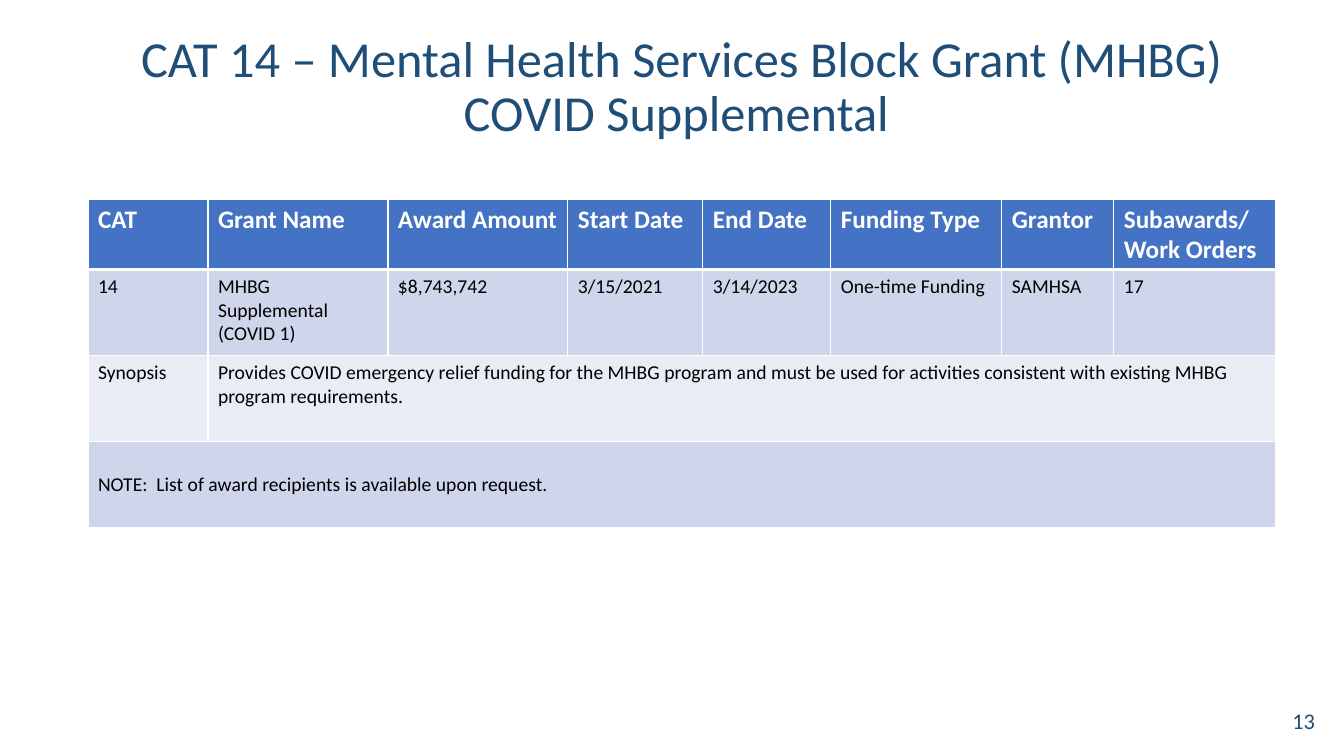
from lxml.etree import SubElement
from pptx import Presentation
from pptx.dml.color import RGBColor
from pptx.enum.text import MSO_ANCHOR as Anchor, PP_ALIGN as Align
from pptx.oxml.ns import qn
from pptx.util import Emu, Pt

SCALE = 12192000 / 1344  # EMU in one px
FONT = "Calibri"
NAVY = RGBColor(0x1F, 0x4E, 0x79)
BLUE = RGBColor(0x44, 0x72, 0xC4)
BAND_DARK = RGBColor(0xCF, 0xD5, 0xEA)
BAND_LIGHT = RGBColor(0xE9, 0xEB, 0xF5)
WHITE = RGBColor(0xFF, 0xFF, 0xFF)
BLACK = RGBColor(0, 0, 0)

COLUMN_WIDTHS = [120, 180, 180, 135, 128, 171, 112, 162]
ROW_HEIGHTS = [70, 86, 86, 86]
ROW_FILLS = [BLUE, BAND_DARK, BAND_LIGHT, BAND_DARK]
ROWS = [
    ["CAT", "Grant Name", "Award Amount", "Start Date", "End Date",
     "Funding Type", "Grantor", "Subawards/Work Orders"],
    ["14", "MHBG Supplemental (COVID 1)", "$8,743,742", "3/15/2021", "3/14/2023",
     "One-time Funding", "SAMHSA", "17"],
    ["Synopsis", "Provides COVID emergency relief funding for the MHBG program and must be "
     "used for activities consistent with existing MHBG program requirements."],
    ["NOTE:  List of award recipients is available upon request."],
]


def px(length):
    return Emu(round(length * SCALE))


def style_runs(paragraph, size, color, bold=False):
    for run in paragraph.runs:
        run.font.name = FONT
        run.font.size = Pt(size)
        run.font.bold = bold
        run.font.color.rgb = color


def add_text(slide, box, text, size, align, line_spacing=None):
    shape = slide.shapes.add_textbox(*map(px, box))
    frame = shape.text_frame
    frame.word_wrap = True
    frame.vertical_anchor = Anchor.MIDDLE
    frame.text = text
    paragraph = frame.paragraphs[0]
    paragraph.alignment = align
    paragraph.line_spacing = line_spacing
    style_runs(paragraph, size, NAVY)


def set_borders(cell, top, bottom):
    """White cell borders; widths in points."""
    properties = cell._tc.get_or_add_tcPr()
    widths = {"a:lnL": 1, "a:lnR": 1, "a:lnT": top, "a:lnB": bottom}
    for index, (tag, width) in enumerate(widths.items()):
        line = SubElement(properties, qn(tag), w=str(Pt(width)))
        fill = SubElement(line, qn("a:solidFill"))
        SubElement(fill, qn("a:srgbClr"), val=str(WHITE))
        properties.insert(index, line)


def add_grant_table(slide, left, top):
    box = left, top, sum(COLUMN_WIDTHS), sum(ROW_HEIGHTS)
    table = slide.shapes.add_table(len(ROWS), len(COLUMN_WIDTHS), *map(px, box)).table
    for column, width in zip(table.columns, COLUMN_WIDTHS):
        column.width = px(width)
    last = len(COLUMN_WIDTHS) - 1

    for row_index, texts in enumerate(ROWS):
        header = row_index == 0
        table.rows[row_index].height = px(ROW_HEIGHTS[row_index])

        # The last text of a short row spans the remaining columns
        if len(texts) <= last:
            start = table.cell(row_index, len(texts) - 1)
            start.merge(table.cell(row_index, last))

        for column_index in range(last + 1):
            cell = table.cell(row_index, column_index)
            cell.fill.solid()
            cell.fill.fore_color.rgb = ROW_FILLS[row_index]
            set_borders(cell, 3 if row_index == 1 else 1, 3 if header else 1)
        for column_index, text in enumerate(texts):
            cell = table.cell(row_index, column_index)
            cell.text_frame.text = text
            style_runs(cell.text_frame.paragraphs[0], 18 if header else 14,
                       WHITE if header else BLACK, header)

    # The note sits in the middle of its row
    table.cell(len(ROWS) - 1, 0).vertical_anchor = Anchor.MIDDLE


def main():
    presentation = Presentation()
    presentation.slide_width, presentation.slide_height = px(1344), px(756)
    slide = presentation.slides.add_slide(presentation.slide_layouts[6])

    # Title
    add_text(slide, (39, 15, 1286, 146),
             "CAT 14 – Mental Health Services Block Grant (MHBG)\vCOVID Supplemental ",
             36, Align.CENTER, 0.9)
    # Grant details
    add_grant_table(slide, 88, 199)
    # Slide number
    add_text(slide, (1023, 701, 302, 40), "13", 16, Align.RIGHT)

    presentation.save("out.pptx")


if __name__ == "__main__":
    main()
